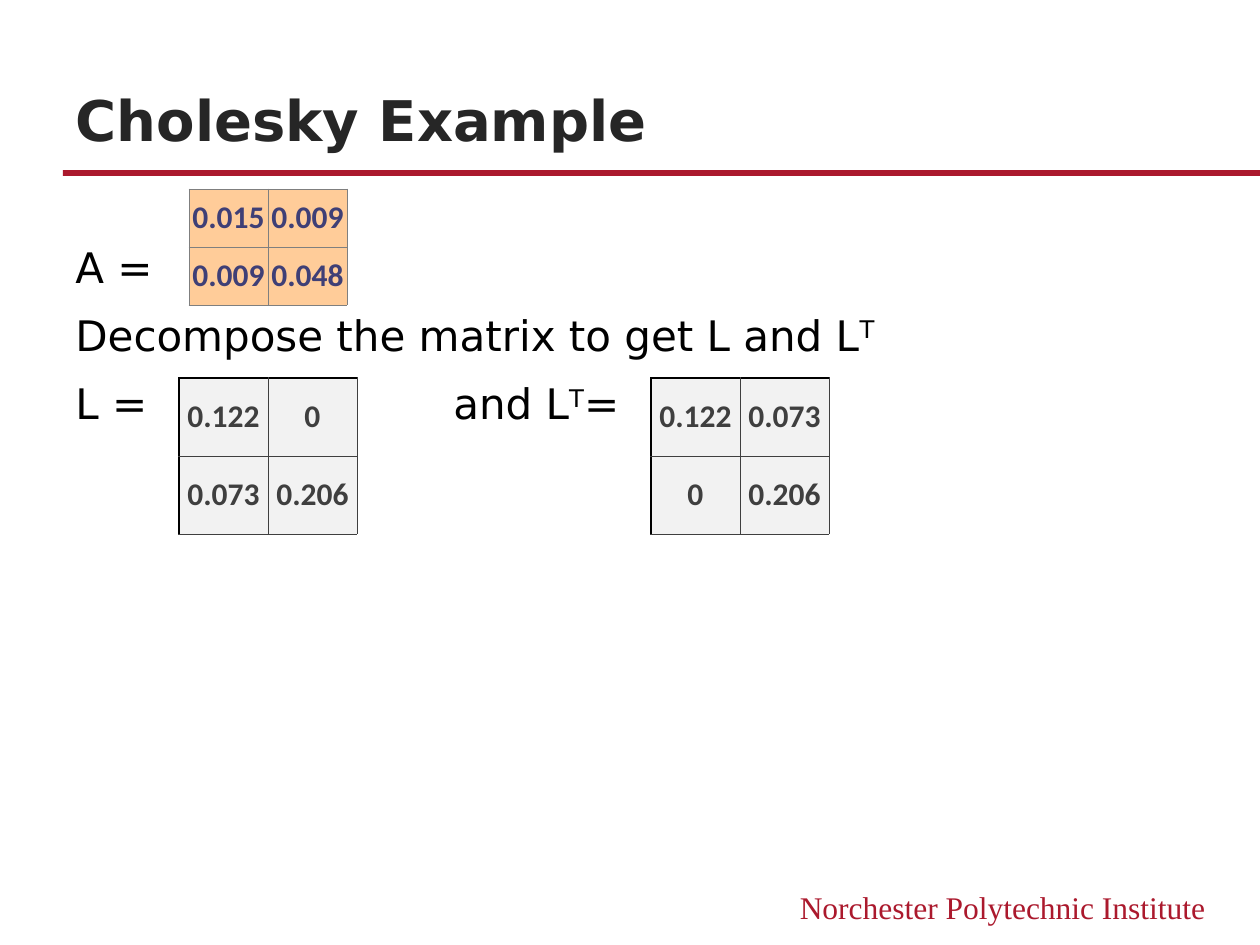
from lxml import etree
from pptx import Presentation, util as u
from pptx.dml.color import RGBColor
from pptx.enum import shapes, text
from pptx.oxml.ns import qn

PX = 914400 / 126
COLORS = {
    "crimson": "AB192D", "title": "262626", "black": "000000",
    "input_text": "3F3F76", "input_fill": "FFCC99", "input_line": "7F7F7F",
    "output_text": "3F3F3F", "output_fill": "F2F2F2",
}
INPUT = {"text": "input_text", "fill": "input_fill",
         "inner": ("input_line", 0.5), "outer": ("input_line", 0.5)}
OUTPUT = {"text": "output_text", "fill": "output_fill",
          "inner": ("output_text", 0.5), "outer": ("black", 1)}
BODY = {"size": 24, "name": "DejaVu Sans", "color": "black"}


def px(*lengths):
    return [u.Emu(round(n * PX)) for n in lengths]


def rgb(color):
    return RGBColor.from_string(COLORS[color])


def set_all(obj, **values):
    for name, value in values.items():
        setattr(obj, name, value)


def add_run(p, content, size, name, color, bold=False, raised=False):
    r = p.add_run()
    r.text = content
    set_all(r.font, size=u.Pt(size), name=name, bold=bold)
    r.font.color.rgb = rgb(color)
    if raised:
        r.font._element.set("baseline", "30000")


def add_title(s, content):
    sp = s.shapes.title
    set_all(sp, **dict(zip(("left", "top", "width", "height"), px(63, 48, 1134, 111))))
    set_all(sp.text_frame, vertical_anchor=text.MSO_ANCHOR.BOTTOM, word_wrap=True)
    p = sp.text_frame.paragraphs[0]
    p.alignment = text.PP_ALIGN.LEFT
    add_run(p, content, 32, "DejaVu Sans", "title", bold=True)


def add_rule(s):
    sp = s.shapes.add_shape(shapes.MSO_SHAPE.RECTANGLE, *px(63, 170, 1197, 6))
    sp.shadow.inherit = False
    sp.fill.solid()
    sp.fill.fore_color.rgb = rgb("crimson")
    sp.line.fill.background()


def add_text_box(s, *box):
    tf = s.shapes.add_textbox(*px(*box)).text_frame
    tf.word_wrap = True
    return tf


def add_tab_stop(p, position):
    tabs = etree.SubElement(p._p.get_or_add_pPr(), qn("a:tabLst"))
    etree.SubElement(tabs, qn("a:tab"), pos=str(px(position)[0]), algn="l")


def add_body(s, lines):
    """Each line is a list of pieces; every second piece is a superscript."""
    tf = add_text_box(s, 63, 210, 1134, 640)
    for i, pieces in enumerate(lines):
        p = tf.add_paragraph() if i else tf.paragraphs[0]
        set_all(p, line_spacing=0.95 if i else 1.5, space_before=u.Pt(12))
        if "\t" in pieces[0]:
            add_tab_stop(p, 378)
        for j, piece in enumerate(pieces):
            add_run(p, piece, raised=j % 2 == 1, **BODY)


def add_border(cell, side, color, width):
    ln = etree.SubElement(cell._tc.get_or_add_tcPr(), qn("a:ln" + side),
                          w=str(u.Pt(width)))
    fill = etree.SubElement(ln, qn("a:solidFill"))
    etree.SubElement(fill, qn("a:srgbClr"), val=COLORS[color])


def add_matrix(s, left, top, cell_w, cell_h, values, style):
    """The outer line style applies to the left and top edges only."""
    rows, cols = len(values), len(values[0])
    table = s.shapes.add_table(
        rows, cols, *px(left, top, cols * cell_w, rows * cell_h)).table
    set_all(table, first_row=False, horz_banding=False)
    for i, row in enumerate(values):
        for j, value in enumerate(row):
            cell = table.cell(i, j)
            set_all(cell, margin_left=0, margin_right=0, margin_top=0,
                    margin_bottom=0, vertical_anchor=text.MSO_ANCHOR.MIDDLE)
            for side in "LRTB":
                outer = (side == "L" and j == 0) or (side == "T" and i == 0)
                add_border(cell, side, *style["outer" if outer else "inner"])
            cell.fill.solid()
            cell.fill.fore_color.rgb = rgb(style["fill"])
            p = cell.text_frame.paragraphs[0]
            p.alignment = text.PP_ALIGN.CENTER
            add_run(p, value, 18, "Calibri", style["text"], bold=True)


def add_footer(s, content):
    p = add_text_box(s, 756, 882, 462, 50).paragraphs[0]
    p.alignment = text.PP_ALIGN.RIGHT
    add_run(p, content, 18, "Times New Roman", "crimson")


def main():
    prs = Presentation()
    prs.slide_width, prs.slide_height = px(1260, 945)
    s = prs.slides.add_slide(prs.slide_layouts[5])
    add_rule(s)
    add_footer(s, "Norchester Polytechnic Institute")
    add_title(s, "Cholesky Example")
    add_body(s, [
        ["A ="],
        ["Decompose the matrix to get L and L", "T"],
        ["L =\tand L", "T", "="],
    ])
    lower = [["0.122", "0"], ["0.073", "0.206"]]
    add_matrix(s, 189, 189, 79, 58, [["0.015", "0.009"], ["0.009", "0.048"]], INPUT)
    add_matrix(s, 179, 378, 89, 78, lower, OUTPUT)
    add_matrix(s, 651, 378, 89, 78, list(zip(*lower)), OUTPUT)
    prs.save("out.pptx")


if __name__ == "__main__":
    main()
